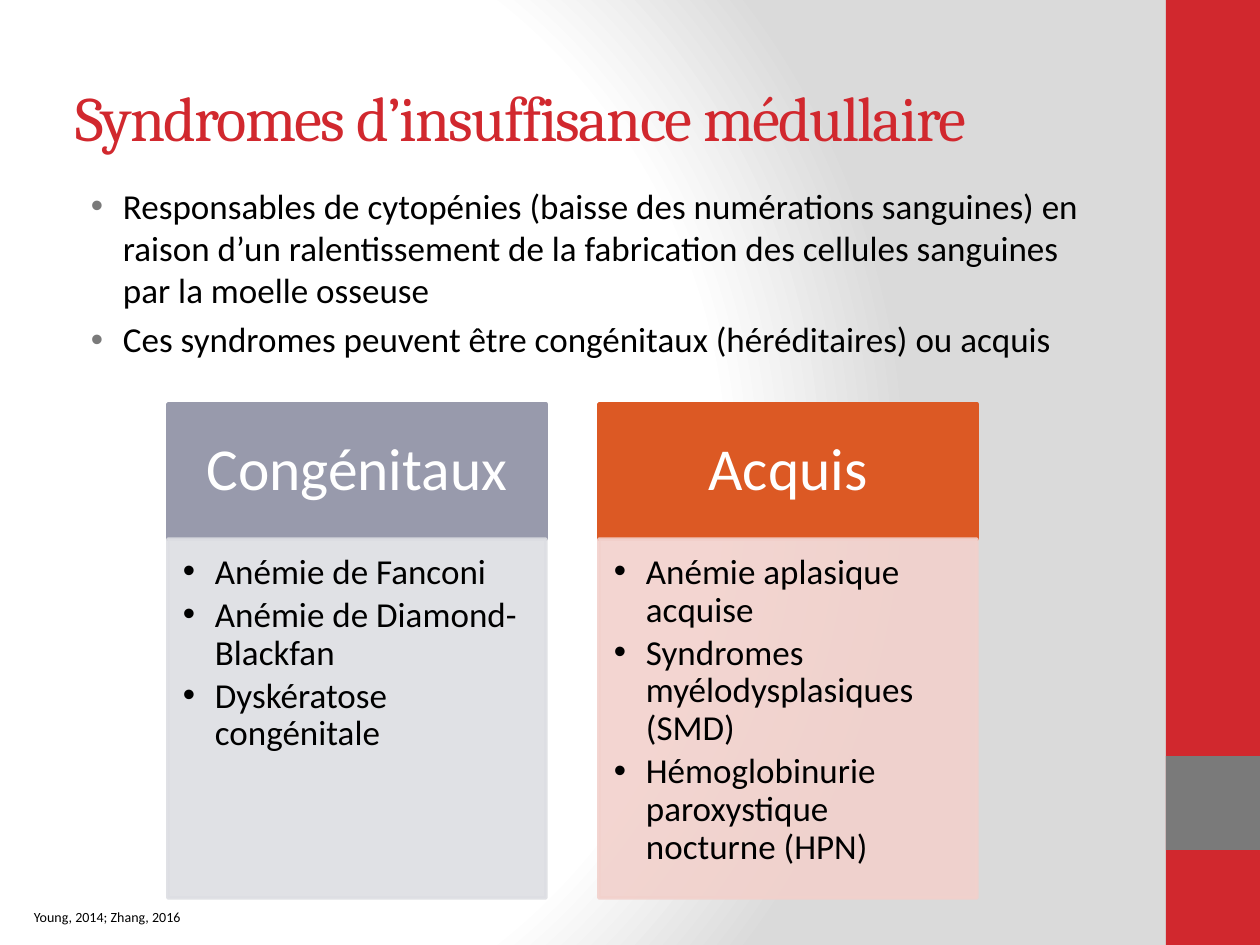
from pptx import Presentation
from pptx.dml.color import RGBColor
from pptx.enum.shapes import MSO_SHAPE
from pptx.enum.text import MSO_ANCHOR, PP_ALIGN
from pptx.oxml import parse_xml
from pptx.oxml.ns import nsdecls, qn
from pptx.util import Emu, Pt

RECT = MSO_SHAPE.RECTANGLE
MIDDLE, TOP = MSO_ANCHOR.MIDDLE, MSO_ANCHOR.TOP
LEFT, CENTER = PP_ALIGN.LEFT, PP_ALIGN.CENTER
PX = 914400 / 126

THEME = {
    "red": "D1282E", "gray": "7A7A7A", "black": "000000", "white": "FFFFFF",
    "shade": "DADADA", "head": "Cambria", "body": "Calibri",
    "title": 36, "label": 34, "text": 20, "note": 8,
}


def add_box(x, y, w, h, color=None, line=False, alpha=None):
    """Add a filled rectangle, or a text box when no color is given."""
    place = [Emu(round(n * PX)) for n in (x, y, w, h)]
    if color is None:
        return slide.shapes.add_textbox(*place)
    box = slide.shapes.add_shape(RECT, *place)
    box.shadow.inherit = False
    fills = [box.fill]
    if line:
        box.line.width = Pt(2)
        fills.append(box.line.fill)
    else:
        box.line.fill.background()
    for fill in fills:
        fill.solid()
        fill.fore_color.rgb = RGBColor.from_string(color)
    if alpha:
        for node in box.element.spPr.iter(qn("a:srgbClr")):
            node.append(parse_xml(
                f'<a:alpha {nsdecls("a")} val="{alpha * 1000}"/>'))
    return box


def write(box, lines, size, color="black", font="body", align=LEFT,
          anchor=TOP, inset=(13, 6, 13, 6), space=1.0, before=0, after=0,
          indent=None, bullet=None):
    """Fill a box with paragraphs; indent is (margin, hang) in px."""
    frame = box.text_frame
    frame.word_wrap = True
    frame.vertical_anchor = anchor
    (frame.margin_left, frame.margin_top, frame.margin_right,
     frame.margin_bottom) = [Emu(round(n * PX)) for n in inset]
    for i, line in enumerate(lines):
        para = frame.paragraphs[0] if i == 0 else frame.add_paragraph()
        para.text = line
        para.alignment = align
        para.line_spacing = space
        para.space_before, para.space_after = Pt(before), Pt(after)
        para.font.name = THEME[font]
        para.font.size = Pt(THEME[size])
        para.font.color.rgb = RGBColor.from_string(THEME[color])
        if indent:
            props = para._p.get_or_add_pPr()
            props.set("marL", str(round(indent[0] * PX)))
            props.set("indent", str(round(-indent[1] * PX)))
            marks = (
                f'<a:buClr {nsdecls("a")}><a:srgbClr val="{THEME[bullet]}"/></a:buClr>',
                f'<a:buFont {nsdecls("a")} typeface="Arial"/>',
                f'<a:buChar {nsdecls("a")} char="•"/>',
            )
            # Bullet marks come before the default run properties
            run = props.find(qn("a:defRPr"))
            for mark in marks:
                run.addprevious(parse_xml(mark))


deck = Presentation()
deck.slide_width, deck.slide_height = Emu(round(1260 * PX)), Emu(round(945 * PX))
slide = deck.slides.add_slide(deck.slide_layouts[6])

# Background: white glow fading to gray on the right
stops = "".join(
    f'<a:gs pos="{pos * 1000}"><a:srgbClr val="{THEME[name]}"/></a:gs>'
    for pos, name in ((0, "white"), (75, "white"), (100, "shade")))
slide.element.cSld.insert(0, parse_xml(
    f'<p:bg {nsdecls("p", "a")}><p:bgPr><a:gradFill rotWithShape="1">'
    f'<a:gsLst>{stops}</a:gsLst><a:path path="circle">'
    '<a:fillToRect l="20000" t="50000" r="100000" b="50000"/></a:path>'
    '</a:gradFill><a:effectLst/></p:bgPr></p:bg>'))

# Side band
add_box(1166, 0, 94, 945, THEME["red"])
add_box(1166, 756, 94, 94, THEME["gray"])

# Title
title = add_box(63, 38, 1050, 157)
write(title, ["Syndromes d’insuffisance médullaire"], "title", "red", "head",
      anchor=MIDDLE)
title.text_frame.paragraphs[0].runs[0].font._element.set("spc", "-100")

# Introduction
write(add_box(63, 179, 1050, 200), [
    "Responsables de cytopénies (baisse des numérations sanguines) en raison "
    "d’un ralentissement de la fabrication des cellules sanguines par la "
    "moelle osseuse",
    "Ces syndromes peuvent être congénitaux (héréditaires) ou acquis",
], "text", before=4, indent=(47, 32), bullet="gray")

# Two cards: label above, list below
CARDS = [
    ("Congénitaux", "989AAC", "DDDEE3",
     ["Anémie de Fanconi", "Anémie de Diamond- Blackfan",
      "Dyskératose congénitale"]),
    ("Acquis", "DC5924", "F2D1CC",
     ["Anémie aplasique acquise", "Syndromes myélodysplasiques (SMD)",
      "Hémoglobinurie paroxystique nocturne (HPN)"]),
]
for i, (label, dark, pale, items) in enumerate(CARDS):
    x = 168 + i * 431
    write(add_box(x, 404, 378, 135, dark, line=True), [label], "label",
          "white", align=CENTER, anchor=MIDDLE, inset=(33, 19, 33, 19),
          space=0.9)
    write(add_box(x, 539, 378, 359, pale, line=True, alpha=90), items, "text",
          inset=(15, 15, 20, 21), space=0.9, after=3, indent=(32, 32),
          bullet="black")

# Sources
write(add_box(21, 903, 262, 30), ["Young, 2014; Zhang, 2016"], "note")

deck.save("out.pptx")
